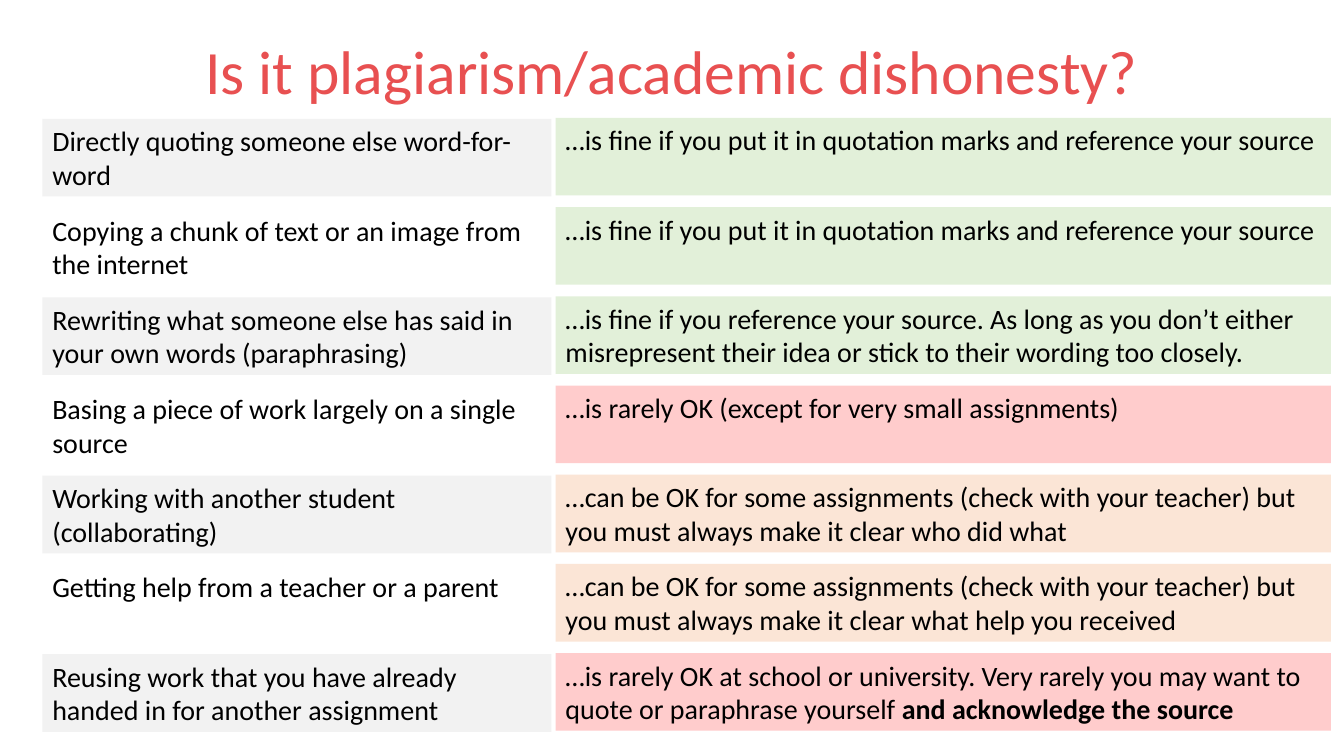
"""Build a slide that judges seven study practices for academic honesty."""
from dataclasses import dataclass
from typing import Optional

from pptx import Presentation
from pptx.dml.color import RGBColor
from pptx.enum.text import MSO_ANCHOR, MSO_AUTO_SIZE, PP_ALIGN
from pptx.slide import Slide
from pptx.text.text import TextFrame
from pptx.util import Inches, Pt

LEFT, CENTER = PP_ALIGN.LEFT, PP_ALIGN.CENTER
TOP, MIDDLE = MSO_ANCHOR.TOP, MSO_ANCHOR.MIDDLE
FIXED_SIZE = MSO_AUTO_SIZE.NONE
TITLE_ONLY = 5


@dataclass(frozen=True)
class Theme:
    """Colours, typeface and type sizes of the slide."""
    font: str = "Calibri"
    title_size: int = 44
    body_size: int = 20
    title: str = "E85051"
    ink: str = "000000"
    stripe: str = "F2F2F2"
    fine: str = "E2F0D9"
    depends: str = "FBE5D6"
    rarely: str = "FFCCCC"


@dataclass(frozen=True)
class Column:
    """Horizontal band of the grid, with the top of its first row."""
    left: float
    width: float
    top: float


@dataclass(frozen=True)
class Case:
    """A practice, the verdict on it and the verdict's colour."""
    practice: str
    verdict: str
    color: str
    emphasis: str = ""


THEME = Theme()
SLIDE_WIDTH, SLIDE_HEIGHT = 13.33, 7.5
ROW_HEIGHT, ROW_PITCH = 0.77, 0.885
PRACTICES = Column(0.42, 5.05, 1.18)
VERDICTS = Column(5.51, 7.69, 1.17)

QUOTE_VERDICT = "…is fine if you put it in quotation marks and reference your source"
CHECK_VERDICT = ("…can be OK for some assignments (check with your teacher) "
                 "but you must always make it clear ")
CASES = (
    Case("Directly quoting someone else word-for-word", QUOTE_VERDICT, THEME.fine),
    Case("Copying a chunk of text or an image from the internet", QUOTE_VERDICT, THEME.fine),
    Case("Rewriting what someone else has said in your own words (paraphrasing)",
         "…is fine if you reference your source. As long as you don’t either "
         "misrepresent their idea or stick to their wording too closely.", THEME.fine),
    Case("Basing a piece of work largely on a single source",
         "…is rarely OK (except for very small assignments)", THEME.rarely),
    Case("Working with another student (collaborating)",
         CHECK_VERDICT + "who did what", THEME.depends),
    Case("Getting help from a teacher or a parent",
         CHECK_VERDICT + "what help you received", THEME.depends),
    Case("Reusing work that you have already handed in for another assignment",
         "…is rarely OK at school or university. Very rarely you may want to "
         "quote or paraphrase yourself ", THEME.rarely, "and acknowledge the source"),
)


def write(frame: TextFrame, text: str, *, emphasis: str = "", size: int = THEME.body_size,
          color: str = THEME.ink, align: PP_ALIGN = LEFT, anchor: MSO_ANCHOR = TOP,
          line_spacing: float = 1.0) -> None:
    """Write one paragraph, followed by an optional bold ending."""
    frame.word_wrap = True
    frame.auto_size = FIXED_SIZE
    frame.vertical_anchor = anchor
    paragraph = frame.paragraphs[0]
    paragraph.alignment = align
    paragraph.line_spacing = line_spacing
    for words, bold in ((text, False), (emphasis, True)):
        if words:
            run = paragraph.add_run()
            run.text = words
            run.font.name = THEME.font
            run.font.size = Pt(size)
            run.font.bold = bold
            run.font.color.rgb = RGBColor.from_string(color)


def add_cell(slide: Slide, column: Column, row: int, text: str,
             fill: Optional[str], emphasis: str = "") -> None:
    """Place one text cell in the grid."""
    cell = slide.shapes.add_textbox(
        Inches(column.left), Inches(column.top + row * ROW_PITCH),
        Inches(column.width), Inches(ROW_HEIGHT))
    if fill:
        cell.fill.solid()
        cell.fill.fore_color.rgb = RGBColor.from_string(fill)
    write(cell.text_frame, text, emphasis=emphasis)


def add_title(slide: Slide, text: str) -> None:
    """Move and fill the title placeholder."""
    title = slide.shapes.title
    title.left, title.top = Inches(0.17), Inches(0.01)
    title.width, title.height = Inches(12.99), Inches(1.45)
    write(title.text_frame, text, size=THEME.title_size, color=THEME.title,
          align=CENTER, anchor=MIDDLE, line_spacing=0.9)


def main() -> None:
    """Build and save the slide."""
    deck = Presentation()
    deck.slide_width, deck.slide_height = Inches(SLIDE_WIDTH), Inches(SLIDE_HEIGHT)
    slide = deck.slides.add_slide(deck.slide_layouts[TITLE_ONLY])
    add_title(slide, "Is it plagiarism/academic dishonesty?")
    for row, case in enumerate(CASES):
        stripe = THEME.stripe if row % 2 == 0 else None
        add_cell(slide, PRACTICES, row, case.practice, stripe)
        add_cell(slide, VERDICTS, row, case.verdict, case.color, case.emphasis)
    deck.save("out.pptx")


if __name__ == "__main__":
    main()
